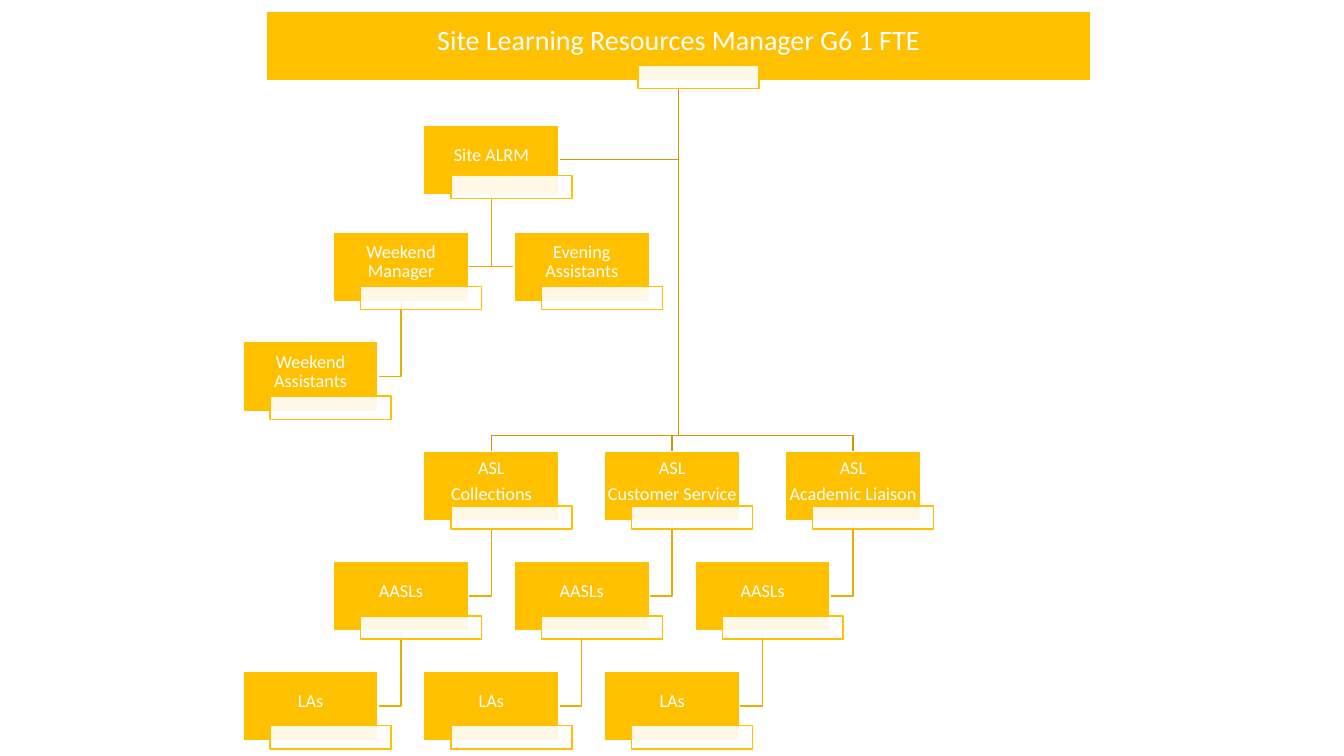
from pptx import Presentation
from pptx.dml.color import RGBColor
from pptx.enum.shapes import MSO_SHAPE as Shape
from pptx.enum.text import MSO_ANCHOR as Anchor, PP_ALIGN as Align
from pptx.oxml.ns import qn
from pptx.util import Inches, Pt
from lxml.etree import SubElement

COLORS = {"gold": "FFC000", "white": "FFFFFF", "upper": "CC9A00", "lower": "E7AE00"}
FONT = "Calibri"
MANAGER = "Site Learning Resources Manager G6 1 FTE"

STAFF = [
    (["ASL", "Collections"], 2, 3, None),
    (["AASLs"], 1, 4, (2, 3)),
    (["LAs"], 0, 5, (1, 4)),
    (["ASL", "Customer Service"], 4, 3, None),
    (["AASLs"], 3, 4, (4, 3)),
    (["LAs"], 2, 5, (3, 4)),
    (["ASL", "Academic Liaison"], 6, 3, None),
    (["AASLs"], 5, 4, (6, 3)),
    (["LAs"], 4, 5, (5, 4)),
    (["Site ALRM"], 2, 0, None),
    (["Weekend Manager"], 1, 1, (2, 0)),
    (["Weekend Assistants"], 0, 2, (1, 1)),
    (["Evening Assistants"], 3, 1, (2, 0)),
]

FIRST_LEFT, LAST_LEFT = 2.41, 7.79
COLUMN_STEP = (LAST_LEFT - FIRST_LEFT) / 6
ROW_TOPS = [1.24, 2.3, 3.39, 4.48, 5.57, 6.66]
BOX_WIDTH, BOX_HEIGHT = 1.34, 0.69
TAG_WIDTH, TAG_HEIGHT = 1.2, 0.23
TOP_BOX = (2.64, 0.11, 8.18, BOX_HEIGHT)
TRUNK_X, TRUNK_Y, BRANCH_Y = 6.73, 0.81, 4.32

deck = Presentation()
deck.slide_width, deck.slide_height = Inches(13.33), Inches(7.5)
page = deck.slides.add_slide(deck.slide_layouts[6])


def color(name):
    return RGBColor.from_string(COLORS[name])


def corner(column, row):
    return FIRST_LEFT + column * COLUMN_STEP, ROW_TOPS[row]


def add_link(points, tone):
    corners = [(Inches(x), Inches(y)) for x, y in points]
    builder = page.shapes.build_freeform(*corners[0])
    builder.add_line_segments(corners[1:], close=False)
    link = builder.convert_to_shape()
    link.shadow.inherit = False
    link.fill.background()
    link.line.color.rgb = color(tone)
    link.line.width = Pt(1)


def add_rectangle(left, top, width, height, fill, line):
    box = page.shapes.add_shape(Shape.RECTANGLE, *map(Inches, (left, top, width, height)))
    box.shadow.inherit = False
    box.fill.solid()
    box.fill.fore_color.rgb = color(fill)
    box.line.color.rgb = color(line)
    box.line.width = Pt(1)
    return box


def add_box(lines, size, left, top, width, height):
    frame = add_rectangle(left, top, width, height, "gold", "white").text_frame
    frame.word_wrap = True
    frame.vertical_anchor = Anchor.MIDDLE
    frame.margin_left = frame.margin_right = frame.margin_top = Inches(0.01)
    frame.margin_bottom = Inches(0.1)
    for index, line in enumerate(lines):
        para = frame.add_paragraph() if index else frame.paragraphs[0]
        para.alignment = Align.CENTER
        para.line_spacing = 0.9
        para.space_after = Pt(size * 0.35)
        span = para.add_run()
        span.text = line
        span.font.name = FONT
        span.font.size = Pt(size)
        span.font.color.rgb = color("white")


def add_tag(left, top):
    tag = add_rectangle(left, top, TAG_WIDTH, TAG_HEIGHT, "white", "gold")
    tint = tag.fill._xPr.find(qn("a:solidFill"))[0]
    SubElement(tint, qn("a:alpha")).set("val", "90000")


def link_to_parent(column, row, parent):
    left, top = corner(column, row)
    middle = top + BOX_HEIGHT / 2
    if parent:
        parent_left, parent_top = corner(*parent)
        stem, start, tone = parent_left + BOX_WIDTH / 2, parent_top + BOX_HEIGHT, "lower"
    else:
        stem, start, tone = TRUNK_X, TRUNK_Y, "upper"
    if parent or row == 0:
        side = left if left > stem else left + BOX_WIDTH
        add_link([(stem, start), (stem, middle), (side, middle)], tone)
    else:
        center = left + BOX_WIDTH / 2
        add_link([(stem, start), (stem, BRANCH_Y), (center, BRANCH_Y), (center, top)], tone)


for _, column, row, parent in reversed(STAFF):
    link_to_parent(column, row, parent)

add_box([MANAGER], 20, *TOP_BOX)
add_tag(6.33, 0.65)

for lines, column, row, _ in STAFF:
    left, top = corner(column, row)
    add_box(lines, 13, left, top, BOX_WIDTH, BOX_HEIGHT)
    add_tag(left + 0.27, top + (0.54 if row else 0.5))

deck.save("out.pptx")
